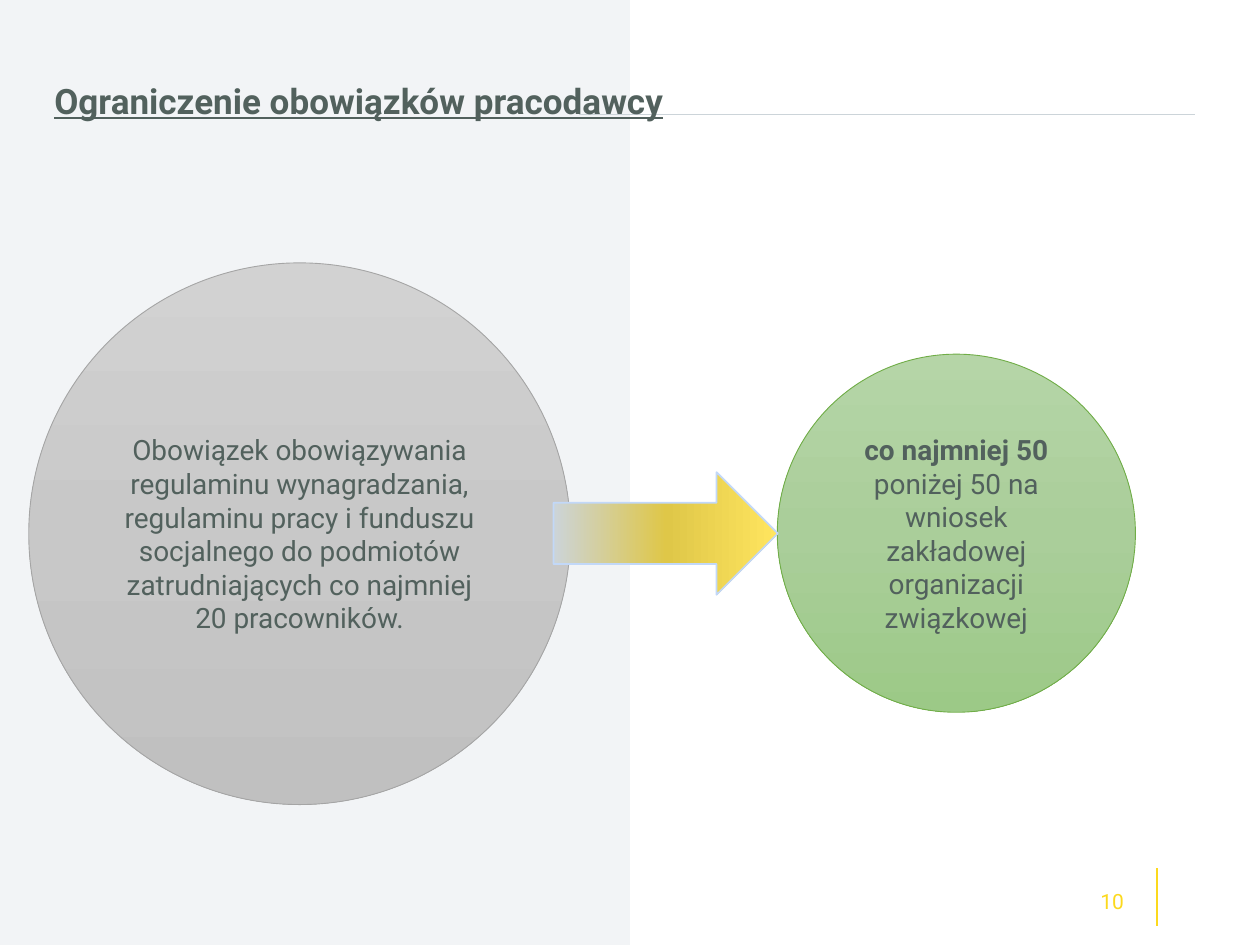
"""Build the slide on limiting employer duties: two circles joined by an arrow."""
import copy

import pptx
import pptx.dml.color
import pptx.enum.shapes
import pptx.enum.text
import pptx.oxml
import pptx.oxml.ns
import pptx.util

Cm = pptx.util.Cm
Pt = pptx.util.Pt
RGB = pptx.dml.color.RGBColor.from_string
SHAPE = pptx.enum.shapes.MSO_SHAPE
ALIGN = pptx.enum.text.PP_ALIGN

COLOURS = {
    "panel": "F2F4F6",
    "rule": "CCD4D9",
    "accent": "FCD91D",
    "text": "52615D",
    "green line": "70AD47",
    "grey line": "A5A5A5",
    "arrow line": "C2D8F8",
}
GRADIENTS = {
    "green": ("B5D5A7", "AACE9A", "9CC987"),
    "grey": ("D2D2D2", "C8C8C8", "C0C0C0"),
    "arrow": ("CCD4D9", "DFC748", "FFE55F"),
}


def write(shape, lines, colour, align, formats):
    frame = shape.text_frame
    frame.word_wrap = True
    frame.vertical_anchor = pptx.enum.text.MSO_ANCHOR.MIDDLE
    for number, (text, bold) in enumerate(lines):
        para = frame.add_paragraph() if number else frame.paragraphs[0]
        para.alignment = align
        span = para.add_run()
        span.text = text
        span.font.color.rgb = RGB(COLOURS[colour])
        for name, value in {"name": "Roboto", "bold": bold, **formats}.items():
            setattr(span.font, name, value)


def fill_gradient(shape, colours, angle):
    shape.fill.gradient()
    shape.fill.gradient_angle = angle
    stop_list = shape.element.spPr.find(".//" + pptx.oxml.ns.qn("a:gsLst"))
    stop_list.insert(1, copy.deepcopy(stop_list[0]))
    for number, (stop, colour) in enumerate(zip(shape.fill.gradient_stops, colours)):
        stop.position = number / 2
        stop.color.rgb = RGB(colour)


deck = pptx.Presentation()
deck.slide_width = Cm(25.4)
deck.slide_height = Cm(19.05)
slide = deck.slides.add_slide(deck.slide_layouts[6])
shapes = slide.shapes

panel = shapes.add_shape(SHAPE.RECTANGLE, 0, 0, Cm(12.7), deck.slide_height)
panel.shadow.inherit = False
panel.fill.solid()
panel.fill.fore_color.rgb = RGB(COLOURS["panel"])
panel.line.fill.background()

rules = [
    ((23.32, 17.5, 23.32, 18.67), "accent", 1.5),
    ((11.68, 2.31, 24.08, 2.31), "rule", 0.75),
]
for ends, colour, width in rules:
    rule = shapes.add_connector(
        pptx.enum.shapes.MSO_CONNECTOR.STRAIGHT, *(Cm(end) for end in ends)
    )
    rule.line.color.rgb = RGB(COLOURS[colour])
    rule.line.width = Pt(width)
    rule.element.spPr.append(pptx.oxml.parse_xml(
        f"<a:effectLst {pptx.oxml.ns.nsdecls('a')}/>"
    ))

page_number = shapes.add_textbox(Cm(17.93), Cm(17.65), Cm(4.98), Cm(1.02))
write(page_number, [("10", False)], "accent", ALIGN.RIGHT, {"size": Pt(12)})

title = shapes.add_textbox(Cm(0.58), Cm(0.74), Cm(13.31), Cm(2.69))
write(title, [("Ograniczenie obowiązków pracodawcy", True)], "text", ALIGN.CENTER,
      {"size": Pt(20), "underline": True})
title.text_frame.paragraphs[0].line_spacing = 0.9

figures = [
    (SHAPE.OVAL, (15.67, 7.14, 7.22, 7.22), "green", 270, 0.5, [
        ("co najmniej 50", True),
        ("poniżej 50 na wniosek zakładowej organizacji związkowej", False),
    ]),
    (SHAPE.OVAL, (0.58, 5.3, 10.92, 10.92), "grey", 270, 0.5, [
        ("Obowiązek obowiązywania regulaminu wynagradzania, regulaminu pracy "
         "i funduszu socjalnego do podmiotów zatrudniających co najmniej "
         "20 pracowników.", False),
    ]),
    (SHAPE.RIGHT_ARROW, (11.16, 9.52, 4.52, 2.47), "arrow", 0, 1, []),
]
for kind, place, scheme, angle, width, lines in figures:
    figure = shapes.add_shape(kind, *(Cm(length) for length in place))
    figure.shadow.inherit = False
    fill_gradient(figure, GRADIENTS[scheme], angle)
    figure.line.color.rgb = RGB(COLOURS[scheme + " line"])
    figure.line.width = Pt(width)
    write(figure, lines, "text", ALIGN.CENTER, {"size": Pt(16)})

deck.save("out.pptx")
